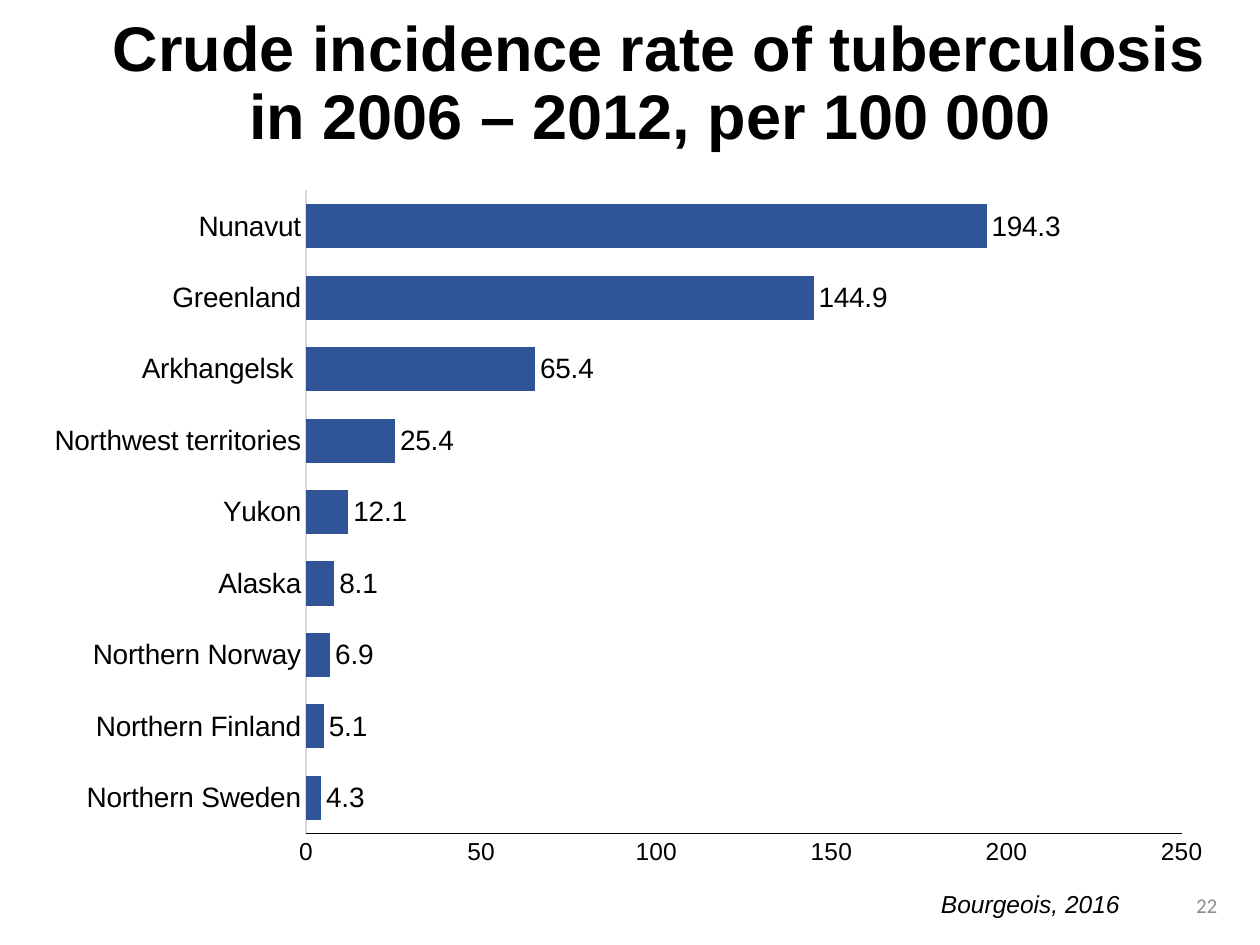
from dataclasses import dataclass

from lxml import etree
from pptx import Presentation
from pptx.chart.data import CategoryChartData as ChartData
from pptx.dml.color import RGBColor as Color
from pptx.enum.chart import XL_CHART_TYPE as Kind
from pptx.enum.chart import XL_LABEL_POSITION as Spot
from pptx.enum.chart import XL_TICK_MARK as Tick
from pptx.enum.text import MSO_ANCHOR as Anchor
from pptx.enum.text import PP_ALIGN as Align
from pptx.oxml.ns import qn
from pptx.util import Inches, Pt


@dataclass(frozen=True)
class Theme:
    font: str = "Arial"
    plain: str = "Calibri"
    ink: str = "000000"
    bar: str = "2F5597"
    rule: str = "D9D9D9"
    mute: str = "8C8C8C"
    title: int = 36
    label: int = 16
    scale: int = 14
    page: int = 12
    base: int = 10


THEME = Theme()

RATES = {
    "Northern Sweden": 4.3,
    "Northern Finland": 5.1,
    "Northern Norway": 6.9,
    "Alaska": 8.1,
    "Yukon": 12.1,
    "Northwest territories": 25.4,
    "Arkhangelsk ": 65.4,
    "Greenland": 144.9,
    "Nunavut": 194.3,
}


def style(font, size, name=THEME.font, color=THEME.ink, bold=False, italic=False):
    font.name, font.size = name, Pt(size)
    font.bold, font.italic = bold, italic
    font.color.rgb = Color.from_string(color)


def add_text(slide, text, box, align=Align.LEFT, anchor=Anchor.TOP,
             wrap=True, space=1.0, **look):
    frame = slide.shapes.add_textbox(*map(Inches, box)).text_frame
    frame.word_wrap = wrap
    frame.vertical_anchor = anchor
    para = frame.paragraphs[0]
    para.alignment, para.line_spacing = align, space
    run = para.add_run()
    run.text = text
    style(run.font, **look)


def set_axis(axis, size, color):
    axis.has_major_gridlines = False
    axis.major_tick_mark = axis.minor_tick_mark = Tick.NONE
    axis.format.line.color.rgb = Color.from_string(color)
    axis.format.line.width = Pt(0.75)
    style(axis.tick_labels.font, size)


def place_plot(chart, **parts):
    area = chart.element.find(".//" + qn("c:plotArea"))
    for old in area.findall(qn("c:layout")):
        area.remove(old)
    layout = etree.Element(qn("c:layout"))
    manual = etree.SubElement(layout, qn("c:manualLayout"))
    modes = {"layoutTarget": "inner", "xMode": "edge", "yMode": "edge"}
    for tag, val in (modes | parts).items():
        etree.SubElement(manual, qn("c:" + tag)).set("val", str(val))
    area.insert(0, layout)


def add_bars(slide, rates, box):
    data = ChartData()
    data.categories = list(rates)
    data.add_series("Series 1", list(rates.values()))
    chart = slide.shapes.add_chart(Kind.BAR_CLUSTERED, *map(Inches, box), data).chart
    chart.has_legend = chart.has_title = False
    style(chart.font, THEME.base, name=THEME.plain)

    set_axis(chart.category_axis, THEME.label, THEME.rule)
    scale = chart.value_axis
    set_axis(scale, THEME.scale, THEME.ink)
    scale.minimum_scale, scale.maximum_scale, scale.major_unit = 0, 250, 50

    plot = chart.plots[0]
    plot.gap_width = 62
    plot.vary_by_categories = False
    fill = plot.series[0].format.fill
    fill.solid()
    fill.fore_color.rgb = Color.from_string(THEME.bar)
    plot.has_data_labels = True
    labels = plot.data_labels
    labels.show_value = True
    labels.position = Spot.OUTSIDE_END
    style(labels.font, THEME.label)
    place_plot(chart, x=0.23, y=0.02, w=0.73, h=0.91)


def main():
    deck = Presentation()
    deck.slide_width, deck.slide_height = Inches(10), Inches(7.5)
    slide = deck.slides.add_slide(deck.slide_layouts[6])
    add_text(slide, "Crude incidence rate of tuberculosis in 2006 – 2012, per 100 000 ",
             (0.69, 0.18, 9.08, 0.99), align=Align.CENTER, anchor=Anchor.MIDDLE,
             space=0.9, size=THEME.title, bold=True)
    add_bars(slide, RATES, (0.24, 1.4, 9.52, 5.61))
    add_text(slide, "Bourgeois, 2016", (7.37, 7.01, 1.63, 0.34), wrap=False,
             size=THEME.scale, italic=True)
    add_text(slide, "22", (7.51, 6.98, 2.25, 0.4), align=Align.RIGHT,
             anchor=Anchor.MIDDLE, size=THEME.page, name=THEME.plain,
             color=THEME.mute)
    deck.save("out.pptx")


if __name__ == "__main__":
    main()
